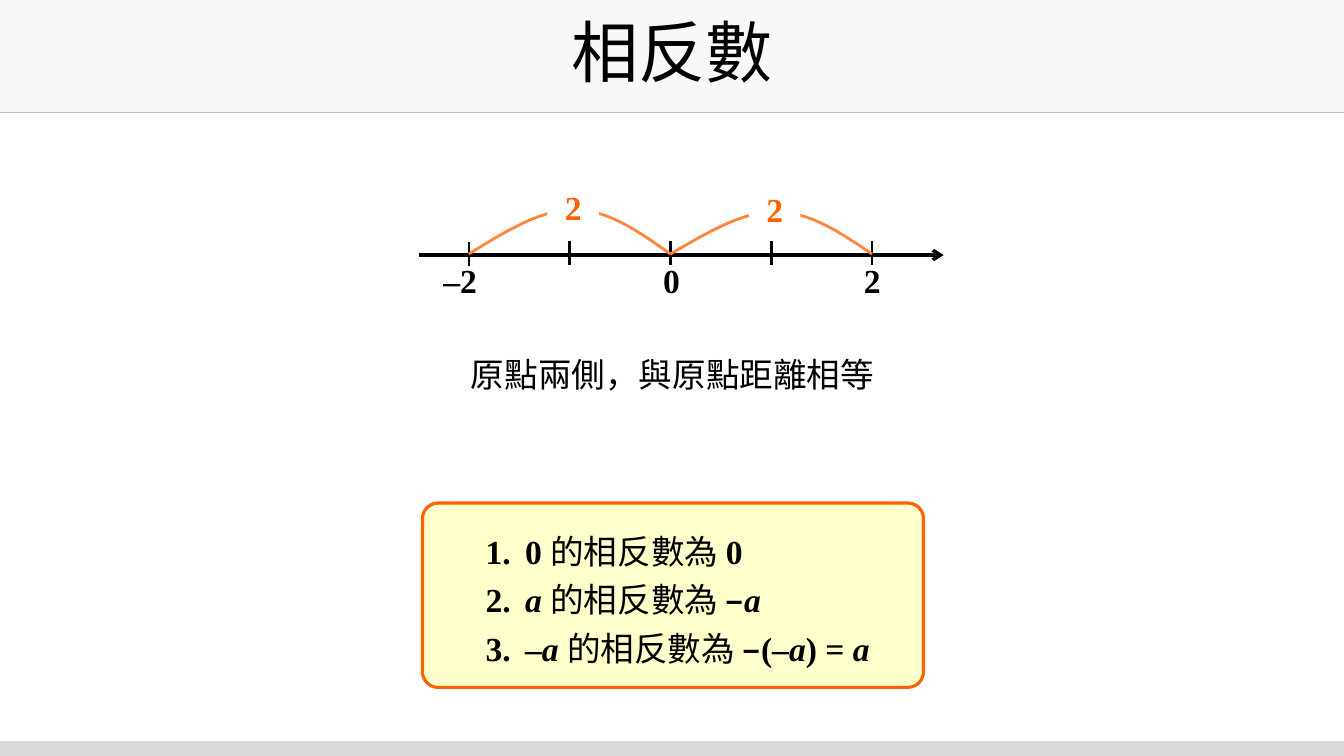
from lxml import etree
from pptx import Presentation
from pptx.dml.color import RGBColor
from pptx.enum.shapes import MSO_CONNECTOR as CONN, MSO_SHAPE as SHAPE
from pptx.enum.text import MSO_ANCHOR as ANCHOR, MSO_AUTO_SIZE as AUTO, PP_ALIGN as ALIGN
from pptx.oxml.ns import qn
from pptx.util import Inches, Pt

BLACK = RGBColor(0x00, 0x00, 0x00)
WHITE = RGBColor(0xFF, 0xFF, 0xFF)
TITLE_FILL = RGBColor(0xF8, 0xF8, 0xF8)
RULE = RGBColor(0xBF, 0xBF, 0xBF)
FOOTER = RGBColor(0xD9, 0xD9, 0xD9)
ORANGE = RGBColor(0xFF, 0x60, 0x00)
ARC = RGBColor(0xFF, 0x86, 0x3B)
CREAM = RGBColor(0xFF, 0xFF, 0xCC)
LATIN = "Times New Roman"
CJK = "Noto Sans CJK SC"

WIDTH, HEIGHT = 13.33, 7.5
RULES = [
    [(" 0 ", "b"), ("的相反數為 ", ""), ("0", "b")],
    [(" ", "b"), ("a ", "bi"), ("的相反數為 ", ""), ("–", "b"), ("a", "bi")],
    [(" –", "b"), ("a ", "bi"), ("的相反數為 ", ""), ("–(–", "b"),
     ("a", "bi"), (") = ", "b"), ("a", "bi")],
]


def add_run(p, text, size=24, color=BLACK, style="", font=LATIN):
    r = p.add_run()
    r.text = text
    r.font.size = Pt(size)
    r.font.name = font
    r.font.bold = "b" in style
    r.font.italic = "i" in style
    r.font.color.rgb = color
    etree.SubElement(r.font._element, qn("a:ea"), typeface=CJK)


def add_box(s, kind, x, y, w, h, fill, line=None, weight=1):
    sp = s.shapes.add_shape(kind, Inches(x), Inches(y), Inches(w), Inches(h))
    sp.shadow.inherit = False
    sp.fill.solid()
    sp.fill.fore_color.rgb = fill
    if line is None:
        sp.line.fill.background()
    else:
        sp.line.color.rgb = line
        sp.line.width = Pt(weight)
    return sp


def add_line(s, x1, y1, x2, y2, color, weight):
    c = s.shapes.add_connector(CONN.STRAIGHT, Inches(x1), Inches(y1), Inches(x2), Inches(y2))
    etree.SubElement(c._element.spPr, qn("a:effectLst"))
    c.line.color.rgb = color
    c.line.width = Pt(weight)
    return c


def add_label(s, text, x, y, w, h=0.5, align=ALIGN.LEFT, style="b", spacing=1.0):
    tb = s.shapes.add_textbox(Inches(x), Inches(y), Inches(w), Inches(h))
    tf = tb.text_frame
    tf.word_wrap = True
    tf.auto_size = AUTO.SHAPE_TO_FIT_TEXT
    p = tf.paragraphs[0]
    p.alignment = align
    p.line_spacing = spacing
    add_run(p, text, style=style)


def add_title(s, title, x, y, w, h):
    sp = add_box(s, SHAPE.RECTANGLE, x, y, w, h, TITLE_FILL)
    sp.text_frame.vertical_anchor = ANCHOR.MIDDLE
    p = sp.text_frame.paragraphs[0]
    p.alignment = ALIGN.CENTER
    p.line_spacing = 0.9
    add_run(p, title, size=48, font=CJK)
    add_line(s, x, y + h, x + w, y + h, RULE, 0.5)


def add_footer(s, x, y, w, h):
    add_box(s, SHAPE.RECTANGLE, x, y, w, h, FOOTER, FOOTER)


def add_distance(s, text, x, y, w, h):
    curves = [((0, 1), (0.18, 0.5), (0.355, 0), (0.52, 0)),
              ((0.52, 0), (0.69, 0), (0.845, 0.5), (1, 1))]
    points = []
    for curve in curves:
        for i in range(17):
            t = i / 16
            weights = ((1 - t) ** 3, 3 * t * (1 - t) ** 2, 3 * t * t * (1 - t), t ** 3)
            u, v = (sum(k * pt[axis] for k, pt in zip(weights, curve)) for axis in (0, 1))
            points.append((Inches(x + u * w), Inches(y + v * h)))
    fb = s.shapes.build_freeform(*points[0])
    fb.add_line_segments(points[1:], close=False)
    sp = fb.convert_to_shape()
    sp.shadow.inherit = False
    sp.fill.background()
    sp.line.color.rgb = ARC
    sp.line.width = Pt(2)

    tag = add_box(s, SHAPE.RECTANGLE, x + 0.78, y - 0.28, 0.51, 0.5, WHITE)
    tag.text_frame.auto_size = AUTO.SHAPE_TO_FIT_TEXT
    p = tag.text_frame.paragraphs[0]
    p.alignment = ALIGN.CENTER
    add_run(p, text, color=ORANGE, style="b")


def add_number_line(s, x, y, w):
    axis = add_line(s, x, y, x + w, y, BLACK, 2.5)
    etree.SubElement(axis.line._get_or_add_ln(), qn("a:tailEnd"), type="arrow")
    zero = x + 2.49
    for n in range(-2, 3):
        drop = 0.01 if n == -2 else 0
        add_line(s, zero + n, y - 0.14 + drop, zero + n, y + 0.1 + drop, BLACK, 1.75)
    for text, n, shift, width in (("–2", -2, -0.35, 0.56), ("0", 0, -0.17, 0.43),
                                  ("2", 2, -0.18, 0.62)):
        add_label(s, text, zero + n + shift, y, width)
    add_distance(s, "2", zero, y - 0.43, 2, 0.42)
    add_distance(s, "2", zero - 2, y - 0.45, 2, 0.44)


def add_rules(s, rules, x, y, w, h):
    sp = add_box(s, SHAPE.ROUNDED_RECTANGLE, x, y, w, h, CREAM, ORANGE, 2.25)
    sp.adjustments[0] = 0.085
    tf = sp.text_frame
    tf.vertical_anchor = ANCHOR.MIDDLE
    tf.margin_left = Inches(0.39)
    for i, parts in enumerate(rules):
        p = tf.add_paragraph() if i else tf.paragraphs[0]
        p.alignment = ALIGN.LEFT
        p.line_spacing = 1.2
        pPr = p._p.get_or_add_pPr()
        pPr.set("marL", str(Inches(0.5)))
        pPr.set("indent", str(Inches(-0.31)))
        etree.SubElement(pPr, qn("a:buFont"), typeface=LATIN)
        etree.SubElement(pPr, qn("a:buAutoNum"), type="arabicPeriod")
        for text, style in parts:
            add_run(p, text, style=style)


def main():
    prs = Presentation()
    prs.slide_width = Inches(WIDTH)
    prs.slide_height = Inches(HEIGHT)
    s = prs.slides.add_slide(prs.slide_layouts[6])
    add_footer(s, 0, 7.36, WIDTH, 0.14)
    add_title(s, "相反數", 0, 0, WIDTH, 1.11)
    add_number_line(s, 4.16, 2.53, 5.2)
    add_rules(s, RULES, 4.19, 4.99, 4.97, 1.83)
    add_label(s, "原點兩側，與原點距離相等", 3.25, 3.38, 6.84, 0.54, ALIGN.CENTER, "", 1.2)
    prs.save("out.pptx")


if __name__ == "__main__":
    main()
